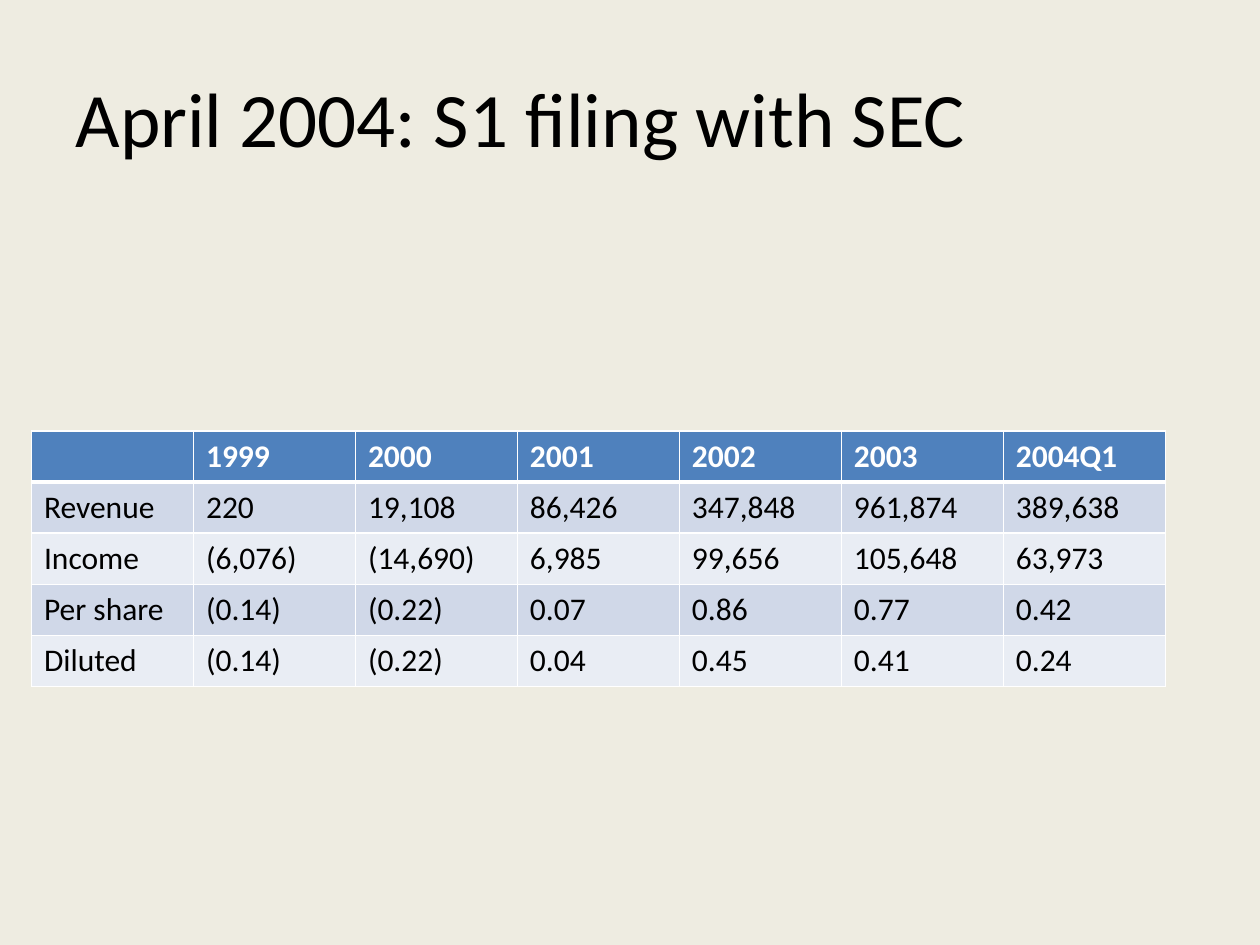
from lxml import etree
from pptx import Presentation
from pptx.dml.color import RGBColor
from pptx.enum.text import MSO_ANCHOR, PP_ALIGN
from pptx.oxml.ns import qn
from pptx.util import Inches, Pt

LEFT = PP_ALIGN.LEFT
MIDDLE = MSO_ANCHOR.MIDDLE

TITLE = "April 2004: S1 filing with SEC"
ROWS = [
    ["", "1999", "2000", "2001", "2002", "2003", "2004Q1"],
    ["Revenue", "220", "19,108", "86,426", "347,848", "961,874", "389,638"],
    ["Income", "(6,076)", "(14,690)", "6,985", "99,656", "105,648", "63,973"],
    ["Per share", "(0.14)", "(0.22)", "0.07", "0.86", "0.77", "0.42"],
    ["Diluted", "(0.14)", "(0.22)", "0.04", "0.45", "0.41", "0.24"],
]
COLORS = {
    "background": "EEECE1",
    "text": "000000",
    "header": "4F81BD",
    "header_text": "FFFFFF",
    "odd": "D0D8E8",
    "even": "E9EDF4",
    "border": "FFFFFF",
}
FONT = "Calibri"


def rgb(name):
    return RGBColor.from_string(COLORS[name])


def set_font(p, size, color, bold=False):
    p.font.name = FONT
    p.font.size = Pt(size)
    p.font.bold = bold
    p.font.color.rgb = rgb(color)


def set_borders(cell, widths):
    tcPr = cell._tc.get_or_add_tcPr()
    for i, (side, width) in enumerate(widths.items()):
        ln = etree.Element(qn(f"a:ln{side}"), w=str(Pt(width)))
        fill = etree.SubElement(ln, qn("a:solidFill"))
        etree.SubElement(fill, qn("a:srgbClr"), val=COLORS["border"])
        tcPr.insert(i, ln)


prs = Presentation()
prs.slide_width, prs.slide_height = Inches(10), Inches(7.5)
s = prs.slides.add_slide(prs.slide_layouts[5])
s.background.fill.solid()
s.background.fill.fore_color.rgb = rgb("background")

title = s.shapes.title
title.left, title.top = Inches(0.5), Inches(0.3)
title.width, title.height = Inches(9), Inches(1.25)
tf = title.text_frame
tf.text = TITLE
tf.vertical_anchor = MIDDLE
p = tf.paragraphs[0]
p.alignment = LEFT
set_font(p, 44, "text")

table = s.shapes.add_table(
    len(ROWS), len(ROWS[0]), Inches(0.25), Inches(3.42), Inches(9), Inches(2.03)
).table
for r, values in enumerate(ROWS):
    header = r == 0
    band = "header" if header else "odd" if r % 2 else "even"
    widths = {"L": 1, "R": 1, "T": 3 if r == 1 else 1, "B": 3 if header else 1}
    for c, value in enumerate(values):
        cell = table.cell(r, c)
        cell.text = value
        cell.fill.solid()
        cell.fill.fore_color.rgb = rgb(band)
        set_borders(cell, widths)
        set_font(cell.text_frame.paragraphs[0], 18,
                 "header_text" if header else "text", header)

prs.save("out.pptx")
